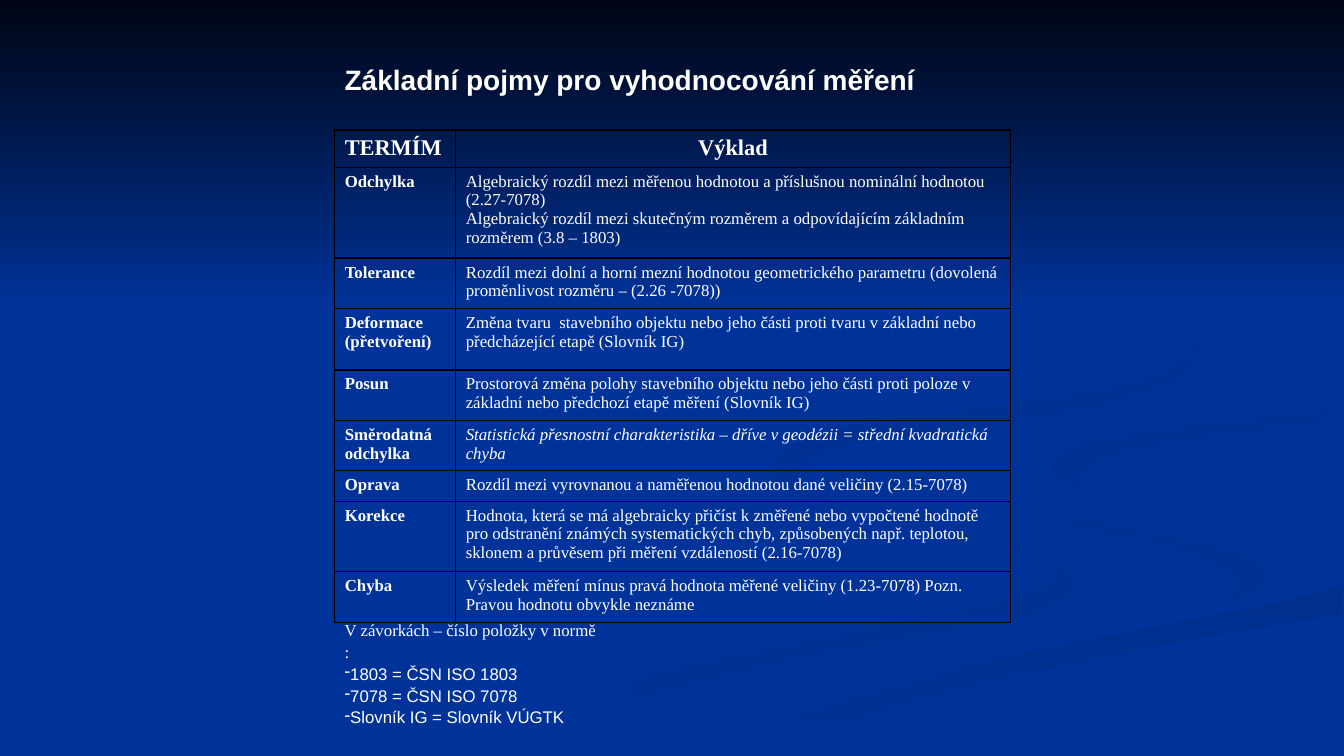
"""Build the slide of basic terms for evaluating measurements."""
from lxml.etree import SubElement
from pptx import Presentation
from pptx.dml.color import RGBColor
from pptx.enum.text import MSO_ANCHOR, PP_ALIGN
from pptx.oxml.ns import qn
from pptx.util import Emu, Pt

PX = 9144
COLORS = {
    "background": "003399", "night": "000514", "text": "FFFFFF", "border": "000000",
    "ribbon": "003193", "band": "002F8C", "fold": "003091", "curl": "002F8E",
}
SANS, SERIF = "Arial", "Times New Roman"

LEFT_RIBBON = [
    (1042, 553), (1023, 547), (993, 538), (953, 528), (881, 513), (835, 502), (803, 490),
    (783, 481), (772, 473), (767, 466), (767, 459), (760, 468), (763, 476), (774, 484),
    (791, 491), (815, 499), (872, 513), (929, 525), (970, 535), (1003, 543), (1027, 551),
    (1041, 556), (1047, 562), (1047, 570), (1039, 579), (1023, 587), (999, 594), (969, 602),
    (933, 609), (870, 620), (772, 639), (665, 661), (556, 690), (502, 707), (450, 727),
    (400, 749), (482, 749), (528, 731), (575, 714), (665, 687), (752, 665), (831, 647),
    (901, 634), (962, 623), (1008, 614), (1039, 605), (1054, 597), (1063, 588), (1067, 581),
    (1066, 573), (1056, 561), (1048, 556),
]
RIGHT_RIBBON = [
    (1257, 570), (1252, 562), (1240, 553), (1206, 540), (1160, 530), (1107, 519), (1056, 509),
    (1010, 498), (978, 483), (969, 474), (965, 464), (966, 474), (973, 484), (985, 494),
    (1007, 505), (1041, 518), (1087, 530), (1139, 539), (1174, 549), (1200, 557), (1215, 567),
    (1223, 576), (1223, 585), (1215, 593), (1191, 605), (1222, 597), (1243, 589), (1254, 581),
]
BOTTOM_BAND = [
    (693, 747), (671, 749), (762, 749), (783, 740), (818, 726), (865, 710), (926, 692),
    (1003, 672), (1095, 651), (1204, 630), (1331, 609), (1331, 581), (1301, 590), (1248, 602),
    (1156, 620), (1062, 638), (1019, 647), (928, 669), (840, 693), (759, 719), (724, 733),
]
RIGHT_FOLD = [
    (1042, 460), (1043, 469), (1054, 478), (1075, 487), (1101, 496), (1083, 487), (1073, 476),
    (1075, 468), (1088, 459), (1124, 448), (1170, 439), (1248, 429), (1294, 423), (1331, 420),
    (1331, 402), (1289, 409), (1198, 418), (1132, 427), (1080, 437), (1054, 447),
]
UPPER_CURL = [
    (911, 430), (986, 421), (1049, 412), (1099, 402), (1139, 391), (1168, 378), (1185, 362),
    (1191, 344), (1186, 324), (1173, 307), (1152, 291), (1124, 275), (1094, 261), (1052, 245),
    (1017, 233), (1073, 254), (1127, 279), (1159, 299), (1180, 320), (1185, 335), (1176, 354),
    (1159, 365), (1122, 378), (1091, 386), (1018, 398), (939, 409), (865, 420), (820, 429),
    (796, 437), (779, 446), (770, 456), (769, 462), (774, 474), (787, 484), (805, 492),
    (829, 500), (809, 490), (796, 480), (791, 470), (795, 461), (808, 452), (832, 444),
    (866, 436),
]
NIGHT_SKY = [(0, 0), (0, 308), (1333, 308), (1333, 0)]
BACKDROP = [
    (LEFT_RIBBON, "background", "ribbon", 0),
    (RIGHT_RIBBON, "background", "ribbon", 45),
    (BOTTOM_BAND, "band", "background", 90),
    (RIGHT_FOLD, "fold", "background", 45),
    (UPPER_CURL, "curl", "background", 45),
    (NIGHT_SKY, "night", "background", 90),
]
ROW_HEIGHTS = [37, 90, 50, 61, 50, 50, 30, 70, 50]
TERMS = [
    ("TERMÍM", ["Výklad"]),
    ("Odchylka", [
        "Algebraický rozdíl mezi měřenou hodnotou a příslušnou nominální hodnotou (2.27-7078)",
        "Algebraický rozdíl mezi skutečným rozměrem a odpovídajícím základním "
        "rozměrem (3.8 – 1803)"]),
    ("Tolerance", [
        "Rozdíl mezi dolní a horní mezní hodnotou geometrického parametru (dovolená "
        "proměnlivost rozměru – (2.26 -7078))"]),
    ("Deformace (přetvoření)", [
        "Změna tvaru  stavebního objektu nebo jeho části proti tvaru v základní nebo "
        "předcházející etapě (Slovník IG)"]),
    ("Posun", [
        "Prostorová změna polohy stavebního objektu nebo jeho části proti poloze "
        "v základní nebo předchozí etapě měření (Slovník IG)"]),
    ("Směrodatná odchylka", [
        "Statistická přesnostní charakteristika – dříve v geodézii = střední kvadratická "
        "chyba"]),
    ("Oprava", ["Rozdíl mezi vyrovnanou a naměřenou hodnotou dané veličiny (2.15-7078)"]),
    ("Korekce", [
        "Hodnota, která se má algebraicky přičíst k změřené nebo vypočtené hodnotě "
        "pro odstranění známých systematických chyb, způsobených např. teplotou, "
        "sklonem a průvěsem při měření vzdáleností (2.16-7078)"]),
    ("Chyba", [
        "Výsledek měření mínus pravá hodnota měřené veličiny (1.23-7078) Pozn. "
        "Pravou hodnotu obvykle neznáme"]),
]
STANDARDS = ["1803 = ČSN ISO 1803", "7078 = ČSN ISO 7078", "Slovník IG = Slovník VÚGTK"]


def rgb(name):
    return RGBColor.from_string(COLORS[name])


def write(frame, text, first=False, size=12, font=SERIF, bold=False, italic=False,
          align=PP_ALIGN.LEFT, bullet=None, spacing=None):
    para = frame.paragraphs[0] if first else frame.add_paragraph()
    para.alignment = align
    if spacing:
        para.line_spacing = spacing
    if bullet:
        properties = para._p.get_or_add_pPr()
        properties.set("marL", "0")
        properties.set("indent", "0")
        SubElement(properties, qn("a:buChar")).set("char", bullet)
    span = para.add_run()
    span.text = text
    span.font.size, span.font.name = Pt(size), font
    span.font.bold, span.font.italic = bold, italic
    span.font.color.rgb = rgb("text")


class SlideBuilder:
    def __init__(self, deck):
        self.page = deck.slides.add_slide(deck.slide_layouts[6])
        fill = self.page.background.fill
        fill.solid()
        fill.fore_color.rgb = rgb("background")

    def outline(self, points, start, end, angle):
        builder = self.page.shapes.build_freeform(*points[0], scale=PX)
        builder.add_line_segments(points[1:], close=True)
        shape = builder.convert_to_shape()
        shape.shadow.inherit = False
        shape.line.fill.background()
        shape.fill.gradient()
        shape.fill.gradient_angle = (360 - angle) % 360
        for stop, name, position in zip(shape.fill.gradient_stops, (start, end), (0, 1)):
            stop.color.rgb = rgb(name)
            stop.position = position

    def text_box(self, *bounds, wrap=True, anchor=MSO_ANCHOR.MIDDLE):
        box = self.page.shapes.add_textbox(*(Emu(value * PX) for value in bounds))
        box.text_frame.word_wrap = wrap
        box.text_frame.vertical_anchor = anchor
        return box.text_frame

    def border(self, cell):
        properties = cell._tc.get_or_add_tcPr()
        for index, side in enumerate(("a:lnL", "a:lnR", "a:lnT", "a:lnB")):
            line = properties.makeelement(qn(side), {"w": str(Pt(1))})
            fill = SubElement(line, qn("a:solidFill"))
            SubElement(fill, qn("a:srgbClr")).set("val", COLORS["border"])
            properties.insert(index, line)

    def term_table(self, left, top, widths, heights, rows):
        bounds = (left, top, sum(widths), sum(heights))
        table = self.page.shapes.add_table(
            len(rows), len(widths), *(Emu(value * PX) for value in bounds)).table
        table.first_row = table.horz_banding = False
        for column, width in zip(table.columns, widths):
            column.width = Emu(width * PX)
        for index, (term, meanings) in enumerate(rows):
            table.rows[index].height = Emu(heights[index] * PX)
            header = index == 0
            for column, lines in enumerate(([term], meanings)):
                cell = table.cell(index, column)
                cell.fill.background()
                self.border(cell)
                for number, line in enumerate(lines):
                    write(cell.text_frame, line, first=number == 0, size=16 if header else 12,
                          bold=header or column == 0,
                          italic=column == 1 and term == "Směrodatná odchylka",
                          align=PP_ALIGN.CENTER if header and column else PP_ALIGN.LEFT)


def main():
    deck = Presentation()
    deck.slide_width, deck.slide_height = Emu(1333 * PX), Emu(750 * PX)
    builder = SlideBuilder(deck)
    for points, start, end, angle in BACKDROP:
        builder.outline(points, start, end, angle)
    title = builder.text_box(332, 55, 590, 74, wrap=False, anchor=MSO_ANCHOR.TOP)
    title.margin_top = Emu(7 * PX)
    write(title, "Základní pojmy pro vyhodnocování měření", first=True, size=20, font=SANS,
          bold=True)
    builder.term_table(332, 129, [120, 550], ROW_HEIGHTS, TERMS)
    legend = builder.text_box(332, 622, 270, 91)
    write(legend, "V závorkách – číslo položky v normě :", first=True, spacing=1.08)
    for standard in STANDARDS:
        write(legend, standard, font=SANS, bullet="-", spacing=1.08)
    deck.save("out.pptx")


if __name__ == "__main__":
    main()
